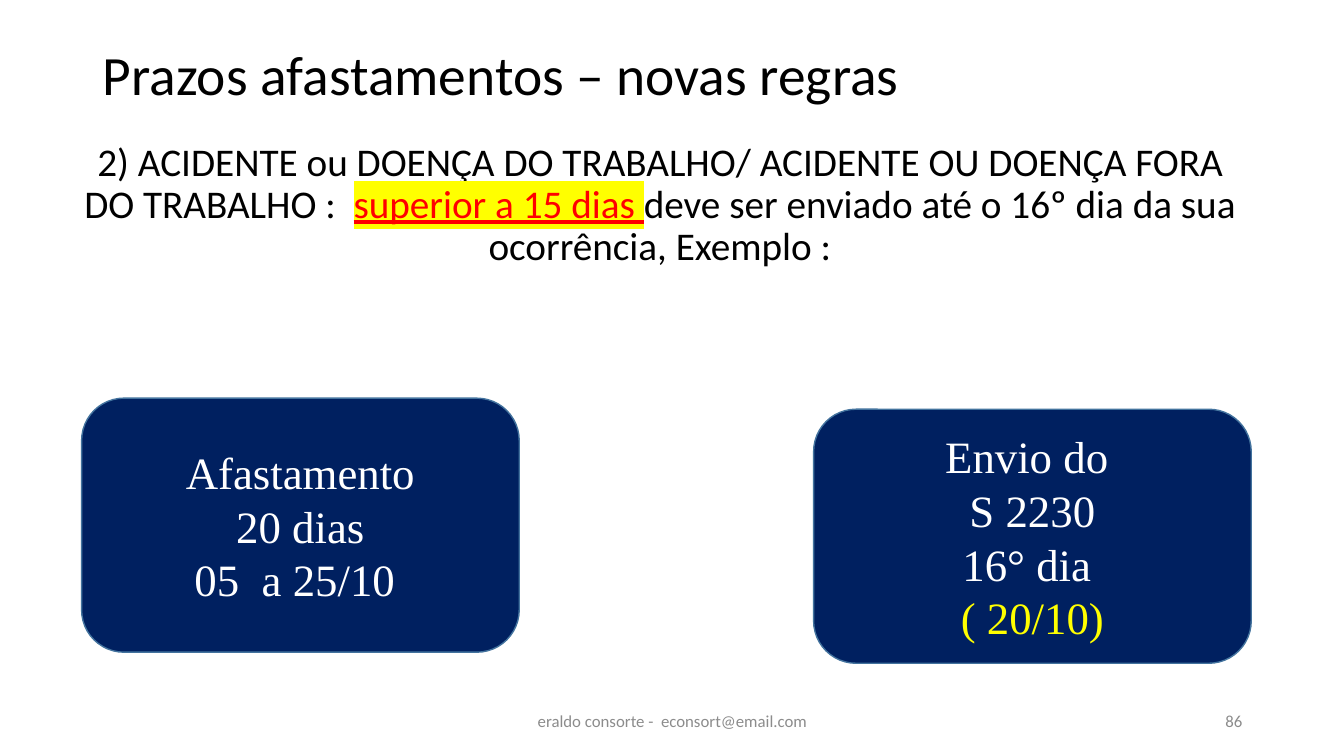
from lxml.etree import SubElement
from pptx import Presentation
from pptx.dml.color import RGBColor
from pptx.enum.shapes import MSO_SHAPE
from pptx.enum.text import MSO_ANCHOR, MSO_AUTO_SIZE, PP_ALIGN
from pptx.oxml.ns import qn
from pptx.util import Inches, Pt

BLACK, WHITE, GRAY = "000000", "FFFFFF", "8C8C8C"
NAVY, EDGE, RED, YELLOW = "002060", "43739E", "FF0000", "FFFF00"


def rgb(value):
    return RGBColor.from_string(value)


def place(sp, box):
    sp.left, sp.top, sp.width, sp.height = (Inches(v) for v in box)


def style(p, size, color, align, name="Calibri"):
    p.alignment = align
    p.font.size = Pt(size)
    p.font.name = name
    p.font.color.rgb = rgb(color)


def add_title(slide, box, text):
    sp = slide.shapes.title
    place(sp, box)
    tf = sp.text_frame
    tf.text = text
    tf.auto_size = MSO_AUTO_SIZE.NONE
    tf.vertical_anchor = MSO_ANCHOR.MIDDLE
    p = tf.paragraphs[0]
    style(p, 39.6, BLACK, PP_ALIGN.LEFT)
    p.line_spacing = 0.9


def add_rule(slide, box, before, marked, after):
    """Fill the body with one sentence whose middle part is highlighted."""
    sp = slide.placeholders[1]
    place(sp, box)
    tf = sp.text_frame
    tf.auto_size = MSO_AUTO_SIZE.NONE
    p = tf.paragraphs[0]
    style(p, 28, BLACK, PP_ALIGN.CENTER)
    p.line_spacing = 0.9
    p.space_before = Pt(10)
    pPr = p._p.get_or_add_pPr()
    pPr.set("marL", "0")
    pPr.set("indent", "0")
    pPr.insert_element_before(pPr.makeelement(qn("a:buNone")), "a:tabLst", "a:defRPr")
    for text in (before, marked, after):
        r = p.add_run()
        r.text = text
        if text == marked:
            r.font.underline = True
            r.font.color.rgb = rgb(RED)
            highlight = SubElement(r.font._element, qn("a:highlight"))
            SubElement(highlight, qn("a:srgbClr"), val=YELLOW)


def add_footer(slide, box, text, align):
    sp = slide.shapes.add_textbox(*(Inches(v) for v in box))
    tf = sp.text_frame
    tf.word_wrap = True
    tf.vertical_anchor = MSO_ANCHOR.MIDDLE
    tf.text = text
    style(tf.paragraphs[0], 12, GRAY, align)


def add_card(slide, box, lines):
    """Draw a rounded card from (text, colour) lines."""
    sp = slide.shapes.add_shape(MSO_SHAPE.ROUNDED_RECTANGLE, *(Inches(v) for v in box))
    sp.shadow.inherit = False
    sp.fill.solid()
    sp.fill.fore_color.rgb = rgb(NAVY)
    sp.line.color.rgb = rgb(EDGE)
    sp.line.width = Pt(1)
    tf = sp.text_frame
    tf.vertical_anchor = MSO_ANCHOR.MIDDLE
    tf.text = "\n".join(text for text, _ in lines)
    for p, (_, color) in zip(tf.paragraphs, lines):
        style(p, 32, color, PP_ALIGN.CENTER, "Times New Roman")


def main():
    prs = Presentation()
    prs.slide_width, prs.slide_height = Inches(13.33), Inches(7.5)
    slide = prs.slides.add_slide(prs.slide_layouts[1])

    add_title(slide, (0.92, 0.4, 11.5, 0.73), "Prazos afastamentos – novas regras")
    add_rule(
        slide, (0.67, 1.36, 11.75, 5.39),
        "2) ACIDENTE ou DOENÇA DO TRABALHO/ ACIDENTE OU DOENÇA FORA DO TRABALHO :  ",
        "superior a 15 dias ",
        "deve ser enviado até o 16º dia da sua ocorrência, Exemplo :",
    )
    add_footer(slide, (4.42, 6.95, 4.5, 0.4),
               "eraldo consorte -  econsort@email.com", PP_ALIGN.CENTER)
    add_footer(slide, (9.42, 6.95, 3, 0.4), "86", PP_ALIGN.RIGHT)
    add_card(slide, (0.81, 3.95, 4.34, 2.52),
             [("Afastamento", WHITE), ("20 dias", WHITE), ("05  a 25/10 ", WHITE)])
    add_card(slide, (8.07, 4.06, 4.34, 2.52),
             [("Envio do ", WHITE), (" S 2230 ", WHITE), ("16° dia ", WHITE),
              ("( 20/10)", YELLOW)])
    prs.save("out.pptx")


if __name__ == "__main__":
    main()
